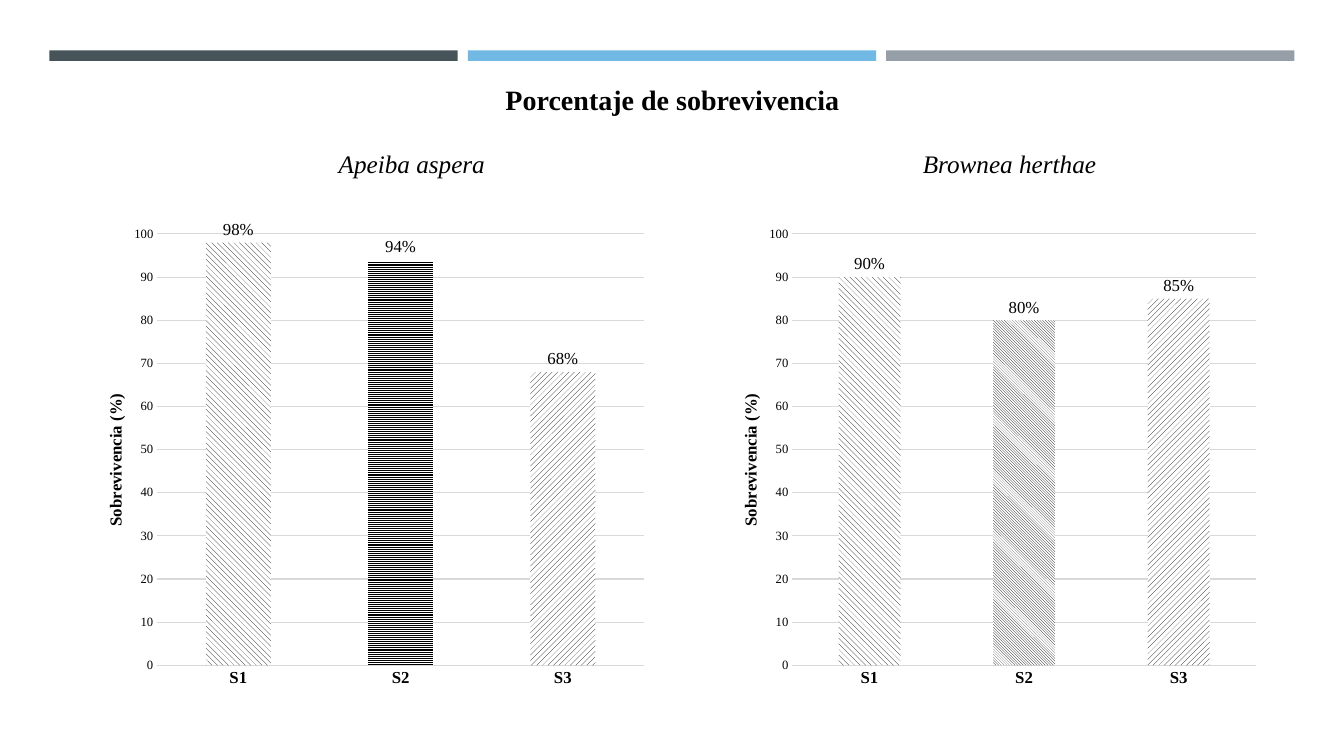
"""Survival percentage slide: two species compared in patterned column charts."""
from dataclasses import dataclass

from lxml.etree import SubElement
from pptx import Presentation
from pptx.chart.chart import Chart
from pptx.chart.data import CategoryChartData
from pptx.dml.color import RGBColor
from pptx.dml.line import LineFormat
from pptx.enum.chart import XL_CHART_TYPE as ChartType, XL_LABEL_POSITION as LabelPosition
from pptx.enum.chart import XL_TICK_MARK as TickMark
from pptx.enum.dml import MSO_PATTERN as Pattern
from pptx.enum.shapes import MSO_SHAPE as ShapeKind
from pptx.enum.text import MSO_ANCHOR as Anchor, PP_ALIGN as Align
from pptx.oxml.ns import qn
from pptx.text.text import Font
from pptx.util import Inches, Pt

SERIF = "Times New Roman"
BLACK, WHITE, GRID_GREY = "000000", "FFFFFF", "D9D9D9"
BAR_COLOURS = ("465359", "71B9E4", "969FA7")
CATEGORIES = ("S1", "S2", "S3")
HEADING = {"name": SERIF, "size": Pt(20), "bold": True, "italic": False}
SPECIES_NAME = {"name": SERIF, "size": Pt(18), "bold": False, "italic": True}
AXIS_BOLD = {"name": SERIF, "size": Pt(12), "bold": True}
VALUE_LABEL = {"name": SERIF, "size": Pt(12), "bold": False}
SCALE_LABEL = {"name": SERIF, "size": Pt(9), "bold": False}
PLOT_LEFT, PLOT_RIGHT, AXIS_TITLE_LEFT = 6.0, 0.83, 1.88


@dataclass
class Area:
    """Position and size as percentages of the slide."""
    left: float
    top: float
    width: float
    height: float


@dataclass
class Species:
    """One species with its survival values and column patterns."""
    name: str
    name_area: Area
    chart_area: Area
    values: tuple
    patterns: tuple


SPECIES = (
    Species("Apeiba aspera", Area(17.18, 18.93, 26.93, 5.47), Area(5.7, 28.8, 43.05, 63.47),
            (98, 94, 68), (Pattern.WIDE_DOWNWARD_DIAGONAL, Pattern.NARROW_HORIZONTAL,
                           Pattern.WIDE_UPWARD_DIAGONAL)),
    Species("Brownea herthae", Area(61.65, 18.93, 26.93, 5.47), Area(52.95, 28.8, 41.33, 63.47),
            (90, 80, 85), (Pattern.WIDE_DOWNWARD_DIAGONAL, Pattern.DARK_DOWNWARD_DIAGONAL,
                           Pattern.WIDE_UPWARD_DIAGONAL)),
)


def colour(value: str) -> RGBColor:
    """Turn a hex string into a colour."""
    return RGBColor.from_string(value)


def frame(deck, area: Area) -> tuple:
    """Convert an area into slide lengths."""
    sides = (deck.slide_width, deck.slide_height) * 2
    shares = (area.left, area.top, area.width, area.height)
    return tuple(int(side * share / 100) for side, share in zip(sides, shares))


def format_font(font: Font, values: dict) -> None:
    """Apply format values and black to a font."""
    for name, value in values.items():
        setattr(font, name, value)
    font.color.rgb = colour(BLACK)


def format_line(line: LineFormat) -> None:
    """Draw a thin grey chart line."""
    line.color.rgb = colour(GRID_GREY)
    line.width = Pt(0.75)


def write(deck, box, area: Area, text: str, values: dict) -> None:
    """Place a text shape and fill it with one centred line."""
    box.left, box.top, box.width, box.height = frame(deck, area)
    box.text_frame.word_wrap = True
    box.text_frame.vertical_anchor = Anchor.MIDDLE
    para = box.text_frame.paragraphs[0]
    para.alignment = Align.CENTER
    span = para.add_run()
    span.text = text
    format_font(span.font, values)


def set_layout(parent, index: int, **shares: float) -> None:
    """Fix the place of a chart part as shares of the chart."""
    for old in parent.findall(qn("c:layout")):
        parent.remove(old)
    layout = SubElement(parent, qn("c:layout"))
    parent.insert(index, layout)
    manual = SubElement(layout, qn("c:manualLayout"))
    if "w" in shares:
        SubElement(manual, qn("c:layoutTarget"), val="inner")
    for mode in ("xMode", "yMode"):
        SubElement(manual, qn(f"c:{mode}"), val="edge")
    for name, share in shares.items():
        SubElement(manual, qn(f"c:{name}"), val=f"{share:.4f}")


def format_axes(chart: Chart, width: float) -> None:
    """Style both axes and place the value title."""
    for axis, values in ((chart.category_axis, AXIS_BOLD), (chart.value_axis, SCALE_LABEL)):
        axis.major_tick_mark = axis.minor_tick_mark = TickMark.NONE
        format_font(axis.tick_labels.font, values)
    format_line(chart.category_axis.format.line)
    scale = chart.value_axis
    for name, value in {"minimum_scale": 0, "maximum_scale": 100, "major_unit": 10}.items():
        setattr(scale, name, value)
    scale.format.line.fill.background()
    format_line(scale.major_gridlines.format.line)
    span = scale.axis_title.text_frame.paragraphs[0].add_run()
    span.text = "Sobrevivencia (%)"
    format_font(span.font, AXIS_BOLD)
    title = chart._chartSpace.find(f".//{qn('c:valAx')}/{qn('c:title')}")
    set_layout(title, 1, x=AXIS_TITLE_LEFT / width, y=0.36)


def add_survival_chart(deck, page, species: Species) -> None:
    """Add the column chart of one species."""
    data = CategoryChartData()
    data.categories = CATEGORIES
    data.add_series("Series 1", species.values)
    chart = page.shapes.add_chart(
        ChartType.COLUMN_CLUSTERED, *frame(deck, species.chart_area), data).chart
    chart.has_legend = chart.has_title = False
    format_font(chart.font, {"name": "Karla", "size": Pt(10)})
    width = species.chart_area.width
    format_axes(chart, width)
    set_layout(chart._chartSpace.find(f".//{qn('c:plotArea')}"), 0, x=PLOT_LEFT / width,
               y=0.034, w=1 - (PLOT_LEFT + PLOT_RIGHT) / width, h=0.899)
    plot = chart.plots[0]
    plot.gap_width, plot.vary_by_categories, plot.has_data_labels = 150, False, True
    label_format = {"show_value": True, "position": LabelPosition.OUTSIDE_END,
                    "number_format": '0"%"', "number_format_is_linked": False}
    for name, value in label_format.items():
        setattr(plot.data_labels, name, value)
    format_font(plot.data_labels.font, VALUE_LABEL)
    series = plot.series[0]
    series.invert_if_negative = False
    for index, pattern in enumerate(species.patterns):
        fill = series.points[index].format.fill
        fill.patterned()
        fill.pattern = pattern
        fill.fore_color.rgb = colour(BLACK)
        fill.back_color.rgb = colour(WHITE)


def add_bar(deck, page, area: Area, value: str) -> None:
    """Add one plain header bar."""
    bar = page.shapes.add_shape(ShapeKind.RECTANGLE, *frame(deck, area))
    bar.shadow.inherit = False
    bar.fill.solid()
    bar.fill.fore_color.rgb = colour(value)
    bar.line.fill.background()


def main() -> None:
    """Build and save the slide."""
    deck = Presentation()
    deck.slide_width, deck.slide_height = Inches(13.33), Inches(7.5)
    page = deck.slides.add_slide(deck.slide_layouts[5])
    for column, value in enumerate(BAR_COLOURS):
        add_bar(deck, page, Area(3.68 + 31.13 * column, 6.67, 30.38, 1.4), value)
    write(deck, page.shapes.title, Area(4.8, 10.27, 90.47, 5.87),
          "Porcentaje de sobrevivencia", HEADING)
    for species in SPECIES:
        box = page.shapes.add_textbox(*frame(deck, species.name_area))
        write(deck, box, species.name_area, species.name, SPECIES_NAME)
        add_survival_chart(deck, page, species)
    deck.save("out.pptx")


if __name__ == "__main__":
    main()
